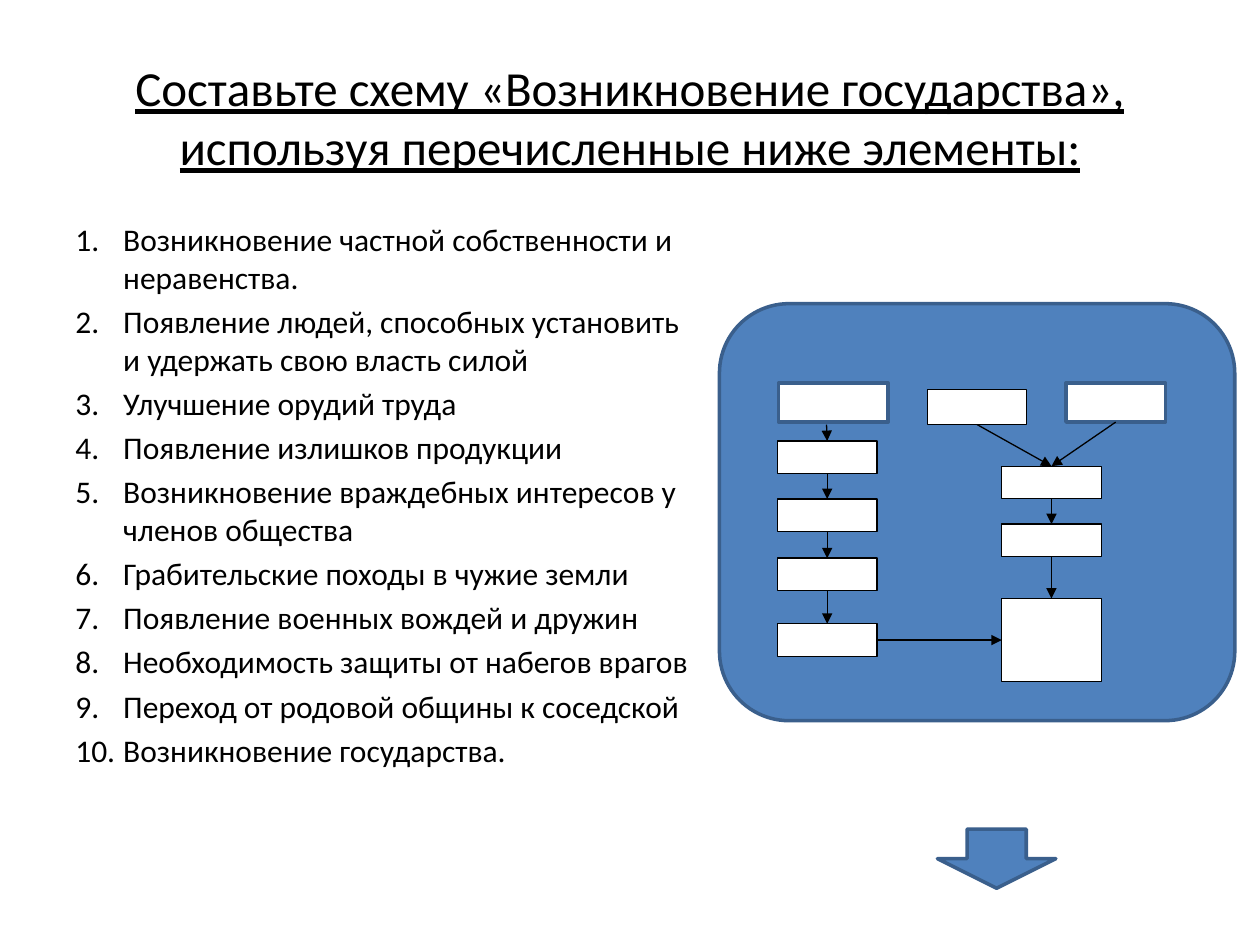
from dataclasses import dataclass

from lxml import etree
from pptx import Presentation
from pptx.dml.color import RGBColor
from pptx.enum.shapes import MSO_CONNECTOR, MSO_SHAPE
from pptx.enum.text import MSO_ANCHOR, PP_ALIGN
from pptx.oxml.ns import qn
from pptx.util import Inches, Pt

RECT = MSO_SHAPE.RECTANGLE
ROUNDED = MSO_SHAPE.ROUNDED_RECTANGLE
DOWN_ARROW = MSO_SHAPE.DOWN_ARROW
STRAIGHT = MSO_CONNECTOR.STRAIGHT
TOP, LEFT, BOTTOM, RIGHT = range(4)


@dataclass(frozen=True)
class Theme:
    font: str = "Calibri"
    ink: RGBColor = RGBColor(0, 0, 0)
    white: RGBColor = RGBColor(255, 255, 255)
    blue: RGBColor = RGBColor(0x4F, 0x81, 0xBD)
    dark_blue: RGBColor = RGBColor(0x3A, 0x5F, 0x8C)
    title_size: int = 28
    list_size: int = 18
    thin: float = 0.75
    thick: float = 2


THEME = Theme()


@dataclass(frozen=True)
class Box:
    left: float
    top: float
    width: float = 0.79
    height: float = 0.26
    outlined: bool = False


@dataclass(frozen=True)
class Link:
    start: str
    end: str
    start_side: int = BOTTOM
    end_side: int = TOP


TITLE = "Составьте схему «Возникновение государства», используя перечисленные ниже элементы:"
ELEMENTS = [
    "Возникновение частной собственности и неравенства.",
    "Появление людей, способных установить и удержать свою власть силой",
    "Улучшение орудий труда",
    "Появление излишков продукции",
    "Возникновение враждебных интересов у членов общества",
    "Грабительские походы в чужие земли",
    "Появление военных вождей и дружин",
    "Необходимость защиты от набегов врагов",
    "Переход от родовой общины к соседской",
    "Возникновение государства.",
]

CAUSE_X, POWER_X = 6.17, 7.95
BOXES = {
    "cause 1": Box(CAUSE_X, 3.5),
    "cause 2": Box(CAUSE_X, 3.96),
    "cause 3": Box(CAUSE_X, 4.43),
    "cause 4": Box(CAUSE_X, 4.95),
    "power 1": Box(POWER_X, 3.7),
    "power 2": Box(POWER_X, 4.16),
    "state": Box(POWER_X, 4.75, height=0.66),
    "middle source": Box(7.36, 3.09, height=0.28),
    "left source": Box(6.18, 3.04, 0.87, 0.31, outlined=True),
    "right source": Box(8.46, 3.04, height=0.31, outlined=True),
}
LINKS = [
    Link("cause 1", "cause 2"),
    Link("cause 2", "cause 3"),
    Link("cause 3", "cause 4"),
    Link("middle source", "power 1"),
    Link("right source", "power 1"),
    Link("power 1", "power 2"),
    Link("power 2", "state"),
    Link("cause 4", "state", RIGHT, LEFT),
]


def add_text(slide, box: Box, paragraphs: list[str], *, size: int,
             align=PP_ALIGN.LEFT, anchor=MSO_ANCHOR.TOP,
             underline: bool = False, numbered: bool = False):
    area = slide.shapes.add_textbox(Inches(box.left), Inches(box.top),
                                    Inches(box.width), Inches(box.height))
    frame = area.text_frame
    frame.word_wrap = True
    frame.vertical_anchor = anchor
    for index, text in enumerate(paragraphs):
        paragraph = frame.paragraphs[0] if index == 0 else frame.add_paragraph()
        if numbered:
            number_paragraph(paragraph)
        paragraph.alignment = align
        if index:
            paragraph.space_before = Pt(size * 0.2)
        run = paragraph.add_run()
        run.text = text
        run.font.name = THEME.font
        run.font.size = Pt(size)
        run.font.color.rgb = THEME.ink
        run.font.underline = underline
    return area


def number_paragraph(paragraph) -> None:
    properties = paragraph._p.get_or_add_pPr()
    indent = Inches(0.38)
    properties.set("marL", str(indent))
    properties.set("indent", str(-indent))
    etree.SubElement(properties, qn("a:buFont"), typeface=THEME.font)
    etree.SubElement(properties, qn("a:buAutoNum"), type="arabicPeriod")


def add_figure(slide, kind, box: Box, fill: RGBColor):
    figure = slide.shapes.add_shape(kind, Inches(box.left), Inches(box.top),
                                    Inches(box.width), Inches(box.height))
    figure.shadow.inherit = False
    figure.fill.solid()
    figure.fill.fore_color.rgb = fill
    figure.line.color.rgb = THEME.dark_blue if box.outlined else THEME.ink
    figure.line.width = Pt(THEME.thick if box.outlined else THEME.thin)
    return figure


def add_arrow(slide, start: tuple[float, float] = (0, 0), end: tuple[float, float] = (0, 0)):
    arrow = slide.shapes.add_connector(STRAIGHT, *map(Inches, start + end))
    arrow.line.color.rgb = THEME.ink
    arrow.line.width = Pt(THEME.thin)
    etree.SubElement(arrow.line._get_or_add_ln(), qn("a:tailEnd"), type="triangle")
    etree.SubElement(arrow._element.spPr, qn("a:effectLst"))
    return arrow


def add_scheme(slide) -> None:
    add_figure(slide, ROUNDED, Box(5.71, 2.41, 4.09, 3.31, outlined=True), THEME.blue)
    figures = {name: add_figure(slide, RECT, box, THEME.white) for name, box in BOXES.items()}
    for link in LINKS:
        arrow = add_arrow(slide)
        arrow.begin_connect(figures[link.start], link.start_side)
        arrow.end_connect(figures[link.end], link.end_side)
    # The wider left source is off the column's axis, so only the end is joined.
    first_arrow = add_arrow(slide, (6.56, 3.37), (6.56, 3.5))
    first_arrow.end_connect(figures["cause 1"], TOP)


def main() -> None:
    presentation = Presentation()
    presentation.slide_width = Inches(10)
    presentation.slide_height = Inches(7.5)
    slide = presentation.slides.add_slide(presentation.slide_layouts[6])
    add_text(slide, Box(0.5, 0.3, 9, 1.25), [TITLE], size=THEME.title_size,
             align=PP_ALIGN.CENTER, anchor=MSO_ANCHOR.MIDDLE, underline=True)
    add_text(slide, Box(0.5, 1.7, 5.13, 5.2), ELEMENTS, size=THEME.list_size, numbered=True)
    add_figure(slide, DOWN_ARROW, Box(7.44, 6.58, 0.94, 0.47, outlined=True), THEME.blue)
    add_scheme(slide)
    presentation.save("out.pptx")


if __name__ == "__main__":
    main()
